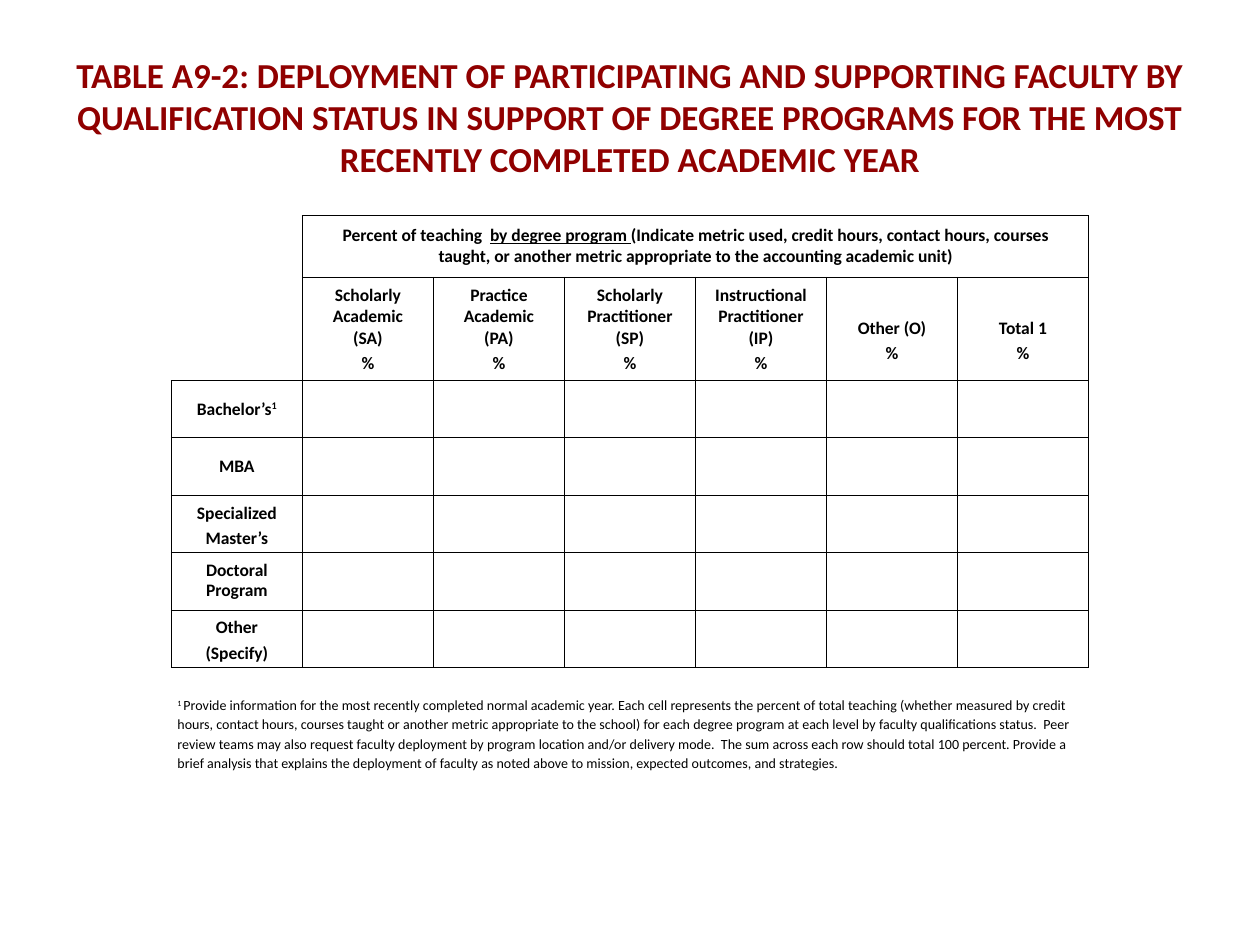
"""Build the faculty deployment table slide."""
from dataclasses import dataclass

from lxml.etree import SubElement
from pptx import Presentation
from pptx.dml.color import RGBColor as Rgb
from pptx.enum.text import MSO_ANCHOR as Anchor, MSO_AUTO_SIZE as Fit, PP_ALIGN as Align
from pptx.oxml import parse_xml
from pptx.oxml.ns import nsdecls, qn
from pptx.util import Inches, Pt


@dataclass(frozen=True)
class Theme:
    face: str = "Calibri"
    title: str = "900000"
    ink: str = "000000"
    paper: str = "FFFFFF"
    head: int = 20
    body: int = 10
    note: int = 8
    rule: float = 0.5


@dataclass(frozen=True)
class Run:
    text: str
    under: bool = False
    raised: bool = False


@dataclass(frozen=True)
class Line:
    runs: tuple[Run, ...]
    lead: float | Pt = 1.0
    before: float = 0


@dataclass(frozen=True)
class Label:
    lines: tuple[Line, ...]
    side: float = 0.1
    top: float = 0


def plain(text: str, lead=1.0, before: float = 0) -> Line:
    return Line((Run(text),), lead, before)


def metric(name: str, lead: float = 1.03, before: float = 0, top: float = 0) -> Label:
    return Label((plain(name, lead), plain("%", 1.15, before)), 0.14, top)


def pair(first: str, last: str, lead=1.15, before: float = 0.4) -> Label:
    return Label((plain(first, lead), plain(last, lead, before)))


THEME = Theme()
WIDE, HIGH = 10, 7.5
LEFT, TOP, COL = 1.36, 1.71, 1.04
ROWS = (0.49, 0.82) + (2.28 / 5,) * 5
COLS = 7
TITLE = ("TABLE A9-2: DEPLOYMENT OF PARTICIPATING AND SUPPORTING FACULTY BY "
         "QUALIFICATION STATUS IN SUPPORT OF DEGREE PROGRAMS FOR THE MOST "
         "RECENTLY COMPLETED ACADEMIC YEAR")
SPAN = Label((Line((
    Run("Percent of teaching  "),
    Run("by degree program ", under=True),
    Run("(Indicate metric used, credit hours, contact hours, courses taught, "
        "or another metric appropriate to the accounting academic unit)"))),))
HEADS = (
    metric("Scholarly Academic (SA)"),
    metric("Practice Academic (PA)"),
    metric("Scholarly Practitioner (SP)"),
    metric("Instructional Practitioner (IP)"),
    metric("Other (O)", 1.15, 0.4, 0.17),
    metric("Total 1", 1.15, 0.4, 0.17),
)
SIDES = (
    Label((Line((Run("Bachelor’s"), Run("1", raised=True))),)),
    Label((plain("MBA"),)),
    pair("Specialized", "Master’s"),
    pair("Doctoral", "Program", Pt(11), 0.1),
    pair("Other", "(Specify)"),
)
NOTE = Line((
    Run("1 ", raised=True),
    Run("Provide information for the most recently completed normal academic year. "
        "Each cell represents the percent of total teaching (whether measured by credit "
        "hours, contact hours, courses taught or another metric appropriate to the school) "
        "for each degree program at each level by faculty qualifications status.  Peer "
        "review teams may also request faculty deployment by program location and/or "
        "delivery mode.  The sum across each row should total 100 percent. Provide a "
        "brief analysis that explains the deployment of faculty as noted above to "
        "mission, expected outcomes, and strategies.")), 1.15)


def style(font, size: int, bold: bool, tint: str) -> None:
    font.name, font.size, font.bold = THEME.face, Pt(size), bold
    font.color.rgb = Rgb.from_string(tint)


def write(frame, lines: tuple[Line, ...], size: int, bold: bool, align: Align) -> None:
    for i, line in enumerate(lines):
        para = frame.add_paragraph() if i else frame.paragraphs[0]
        para.alignment, para.line_spacing = align, line.lead
        para.space_before = Pt(line.before)
        style(para.font, size, bold, THEME.ink)
        for part in line.runs:
            run = para.add_run()
            run.text = part.text
            if part.under:
                run.font.underline = True
            if part.raised:
                run.font._element.set("baseline", "30000")


def edge(cell, sides: str) -> None:
    props = cell._tc.get_or_add_tcPr()
    for i, side in enumerate("LRTB"):
        line = parse_xml(f'<a:ln{side} {nsdecls("a")} w="{Pt(THEME.rule)}"/>')
        if side in sides:
            fill = SubElement(line, qn("a:solidFill"))
            SubElement(fill, qn("a:srgbClr"), val=THEME.ink)
        else:
            SubElement(line, qn("a:noFill"))
        props.insert(i, line)


def label(cell, item: Label) -> None:
    cell.vertical_anchor = Anchor.MIDDLE
    cell.margin_left = cell.margin_right = Inches(item.side)
    cell.margin_top, cell.margin_bottom = Inches(item.top), 0
    write(cell.text_frame, item.lines, THEME.body, True, Align.CENTER)


def grid(slide) -> None:
    table = slide.shapes.add_table(
        len(ROWS), COLS, Inches(LEFT), Inches(TOP),
        Inches(COL * COLS), Inches(sum(ROWS))).table
    table.first_row = table.horz_banding = False
    for col in table.columns:
        col.width = Inches(COL)
    bare = {(0, 0): "R", (1, 0): "RB"}
    for r, high in enumerate(ROWS):
        table.rows[r].height = Inches(high)
        for c in range(COLS):
            cell = table.cell(r, c)
            cell.fill.solid()
            cell.fill.fore_color.rgb = Rgb.from_string(THEME.paper)
            edge(cell, bare.get((r, c), "LRTB"))
    table.cell(0, 1).merge(table.cell(0, COLS - 1))
    label(table.cell(0, 1), SPAN)
    for c, item in enumerate(HEADS, 1):
        label(table.cell(1, c), item)
    for r, item in enumerate(SIDES, 2):
        label(table.cell(r, 0), item)


def head(slide) -> None:
    title = slide.shapes.title
    title.left, title.top = Inches(WIDE * 0.05), Inches(HIGH * 0.04)
    title.width, title.height = Inches(WIDE * 0.9), Inches(HIGH / 6)
    frame = title.text_frame
    frame.text = TITLE
    frame.auto_size, frame.vertical_anchor = Fit.NONE, Anchor.MIDDLE
    frame.paragraphs[0].alignment = Align.CENTER
    style(frame.paragraphs[0].font, THEME.head, True, THEME.title)


def foot(slide) -> None:
    box = slide.shapes.add_textbox(Inches(1.31), Inches(5.46), Inches(7.38), Inches(0.72))
    box.text_frame.word_wrap = True
    write(box.text_frame, (NOTE,), THEME.note, False, Align.LEFT)


def main() -> None:
    deck = Presentation()
    deck.slide_width, deck.slide_height = Inches(WIDE), Inches(HIGH)
    slide = deck.slides.add_slide(deck.slide_layouts[5])
    head(slide)
    grid(slide)
    foot(slide)
    deck.save("out.pptx")


if __name__ == "__main__":
    main()
